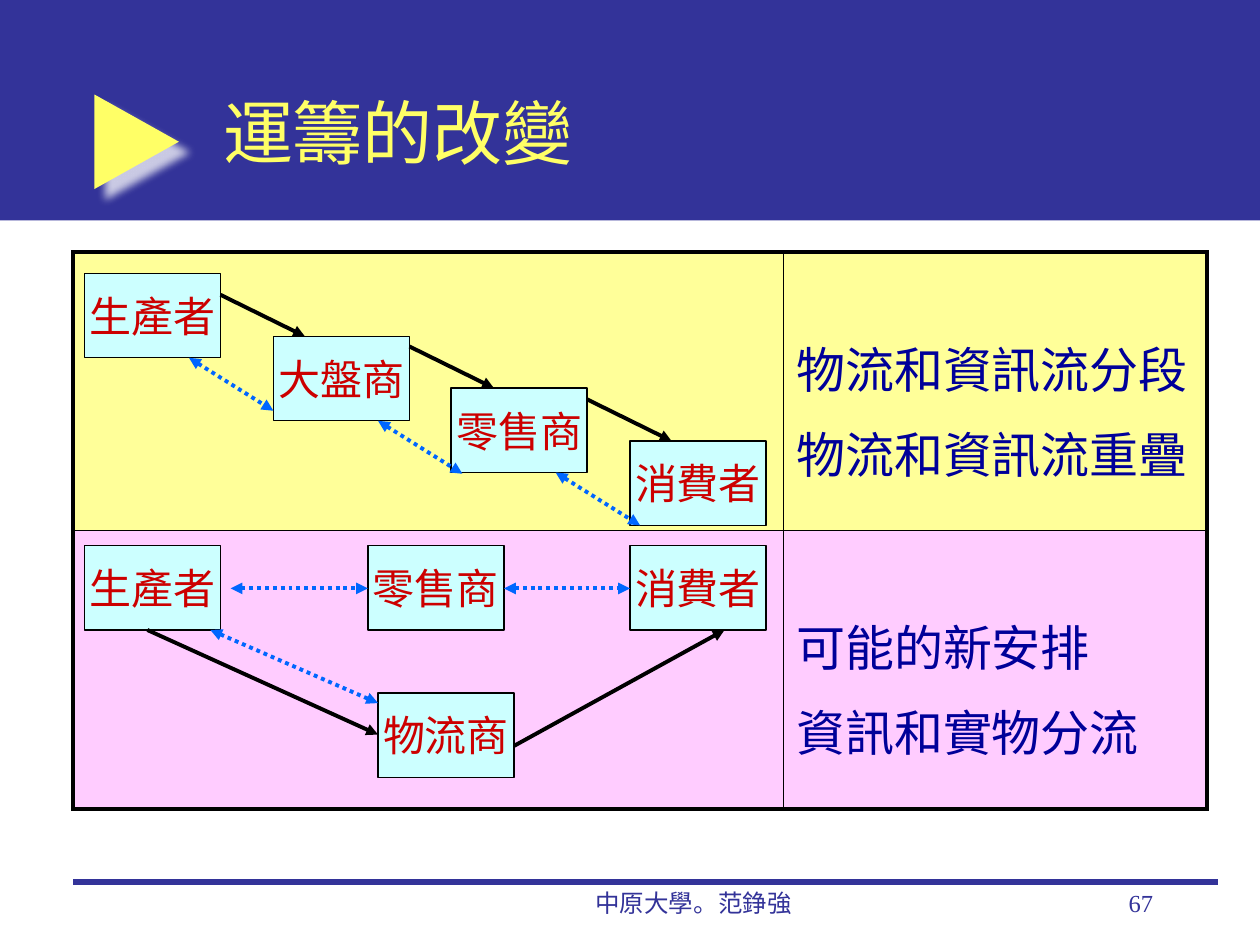
from itertools import pairwise

from lxml.etree import SubElement
from pptx import Presentation
from pptx.dml.color import RGBColor
from pptx.enum.dml import MSO_LINE
from pptx.enum.shapes import MSO_CONNECTOR, MSO_SHAPE
from pptx.enum.text import MSO_ANCHOR, PP_ALIGN
from pptx.oxml import parse_xml
from pptx.oxml.ns import nsdecls, qn
from pptx.util import Inches, Pt

TITLE = "運籌的改變"
FOOTER = "中原大學。范錚強"
PAGE_NUMBER = "67"
NAVY, YELLOW, BLACK, BLUE = "333399", "FFFF66", "000000", "0066FF"
SERIF = "Times New Roman"

TABLE_ROWS = [
    ("FFFF99", ["物流和資訊流分段", "物流和資訊流重疊"]),
    ("FFCCFF", ["可能的新安排", "資訊和實物分流"]),
]
COLUMN_WIDTHS = [5.64, 3.36]
ROW_HEIGHT = 2.21

BOX_WIDTH, BOX_HEIGHT = 1.08, 0.67
CHAIN = [("生產者", 0.67, 2.17), ("大盤商", 2.17, 2.67),
         ("零售商", 3.58, 3.08), ("消費者", 5, 3.5)]
NETWORK = [("生產者", 0.67, 4.33), ("零售商", 2.92, 4.33),
           ("消費者", 5, 4.33), ("物流商", 3, 5.5)]
NETWORK_GOODS = [((1.17, 5), (3, 5.83)), ((4.08, 5.92), (5.75, 5))]
NETWORK_INFORMATION = [((1.83, 4.67), (2.92, 4.67)), ((4, 4.67), (5, 4.67)),
                       ((1.67, 5), (3, 5.58))]


def color(value):
    return RGBColor.from_string(value)


def write(frame, lines, size, ink, font=SERIF, align=PP_ALIGN.LEFT,
          anchor=MSO_ANCHOR.TOP, wrap=True, gap=0):
    """Fill a text frame with one paragraph per line, gap points apart."""
    frame.word_wrap = wrap
    frame.vertical_anchor = anchor
    for index, line in enumerate(lines):
        para = frame.add_paragraph() if index else frame.paragraphs[0]
        para.alignment = align
        para.space_before = Pt(gap if index else 0)
        span = para.add_run()
        span.text = line
        span.font.size = Pt(size)
        span.font.name = font
        span.font.color.rgb = color(ink)


def add_block(page, kind, left, top, width, height, fill, border=None):
    block = page.shapes.add_shape(
        kind, Inches(left), Inches(top), Inches(width), Inches(height))
    block.shadow.inherit = False
    block.fill.solid()
    block.fill.fore_color.rgb = color(fill)
    if border:
        block.line.color.rgb = color(border)
        block.line.width = Pt(0.75)
    else:
        block.line.fill.background()
    return block


def add_line(page, start, end, ink, width=2.25, dotted=False, ends=()):
    line = page.shapes.add_connector(
        MSO_CONNECTOR.STRAIGHT, *map(Inches, start + end))
    line.line.color.rgb = color(ink)
    line.line.width = Pt(width)
    if dotted:
        line.line.dash_style = MSO_LINE.ROUND_DOT
    properties = line.element.spPr
    for name in ends:
        SubElement(properties.find(qn("a:ln")), qn(f"a:{name}"), type="triangle")
    SubElement(properties, qn("a:effectLst"))


def add_goods_flow(page, start, end):
    add_line(page, start, end, BLACK, ends=["tailEnd"])


def add_information_flow(page, start, end):
    add_line(page, start, end, BLUE, dotted=True, ends=["headEnd", "tailEnd"])


def add_party(page, name, left, top):
    box = add_block(page, MSO_SHAPE.RECTANGLE, left, top, BOX_WIDTH, BOX_HEIGHT,
                    "CCFFFF", BLACK)
    write(box.text_frame, [name], 24, "CC0000", align=PP_ALIGN.CENTER,
          anchor=MSO_ANCHOR.MIDDLE, wrap=False)


def add_label(page, text, left, width, align):
    box = page.shapes.add_textbox(Inches(left), Inches(7), Inches(width), Inches(0.5))
    write(box.text_frame, [text], 14, NAVY, align=align)


def set_borders(cell, outer_sides):
    properties = cell._tc.get_or_add_tcPr()
    for index, side in enumerate("LRTB"):
        width = Pt(2.25 if side in outer_sides else 1)
        properties.insert(index, parse_xml(
            f'<a:ln{side} {nsdecls("a")} w="{width}"><a:solidFill>'
            f'<a:srgbClr val="{BLACK}"/></a:solidFill></a:ln{side}>'))


def add_comparison(page):
    table = page.shapes.add_table(
        2, 2, Inches(0.58), Inches(2), Inches(sum(COLUMN_WIDTHS)),
        Inches(2 * ROW_HEIGHT)).table
    for column, width in zip(table.columns, COLUMN_WIDTHS):
        column.width = Inches(width)
    for row, (fill, lines) in enumerate(TABLE_ROWS):
        table.rows[row].height = Inches(ROW_HEIGHT)
        for column in range(2):
            cell = table.cell(row, column)
            cell.fill.solid()
            cell.fill.fore_color.rgb = color(fill)
            set_borders(cell, "LR"[column] + "TB"[row])
        cell.margin_top = Inches(0.63)
        write(cell.text_frame, lines, 28, "000099", font="Arial", gap=8.4)


def add_frame(page):
    """Draw the title band, its pointer, the title and the footer."""
    add_block(page, MSO_SHAPE.RECTANGLE, 0, 0, 10, 1.75, NAVY)
    pointer = add_block(page, MSO_SHAPE.RIGHT_ARROW, 0.75, 0.75, 0.67, 0.75, YELLOW)
    pointer.adjustments[0], pointer.adjustments[1] = 0.384, 1
    effects = pointer.element.spPr.find(qn("a:effectLst"))
    effects.append(parse_xml(
        f'<a:outerShdw {nsdecls("a")} blurRad="{Pt(5)}" dist="{Pt(8.5)}" '
        'dir="2700000" algn="ctr" rotWithShape="0"><a:srgbClr val="FFFFFF">'
        '<a:alpha val="75000"/></a:srgbClr></a:outerShdw>'))
    title = page.shapes.title
    title.left, title.top = Inches(1.67), Inches(0.42)
    title.width, title.height = Inches(7.58), Inches(1.25)
    write(title.text_frame, [TITLE], 40, YELLOW, font="Arial", anchor=MSO_ANCHOR.MIDDLE)
    title.element.getparent().append(title.element)  # in front of the band
    add_line(page, (0.58, 7), (9.67, 7), NAVY, width=3)
    add_label(page, FOOTER, 3.92, 3.17, PP_ALIGN.CENTER)
    add_label(page, PAGE_NUMBER, 7.17, 2.08, PP_ALIGN.RIGHT)


def main():
    deck = Presentation()
    deck.slide_width, deck.slide_height = Inches(10), Inches(7.5)
    page = deck.slides.add_slide(deck.slide_layouts[5])
    add_frame(page)
    add_comparison(page)
    for party in CHAIN + NETWORK:
        add_party(page, *party)
    for (_, left, top), (_, _, next_top) in pairwise(CHAIN):
        right, bottom = left + BOX_WIDTH, top + BOX_HEIGHT
        add_goods_flow(page, (right, next_top - 0.33), (right + 0.67, next_top))
        add_information_flow(page, (left + 0.83, bottom), (left + 1.5, bottom + 0.42))
    for start, end in NETWORK_GOODS:
        add_goods_flow(page, start, end)
    for start, end in NETWORK_INFORMATION:
        add_information_flow(page, start, end)
    deck.save("out.pptx")


if __name__ == "__main__":
    main()
